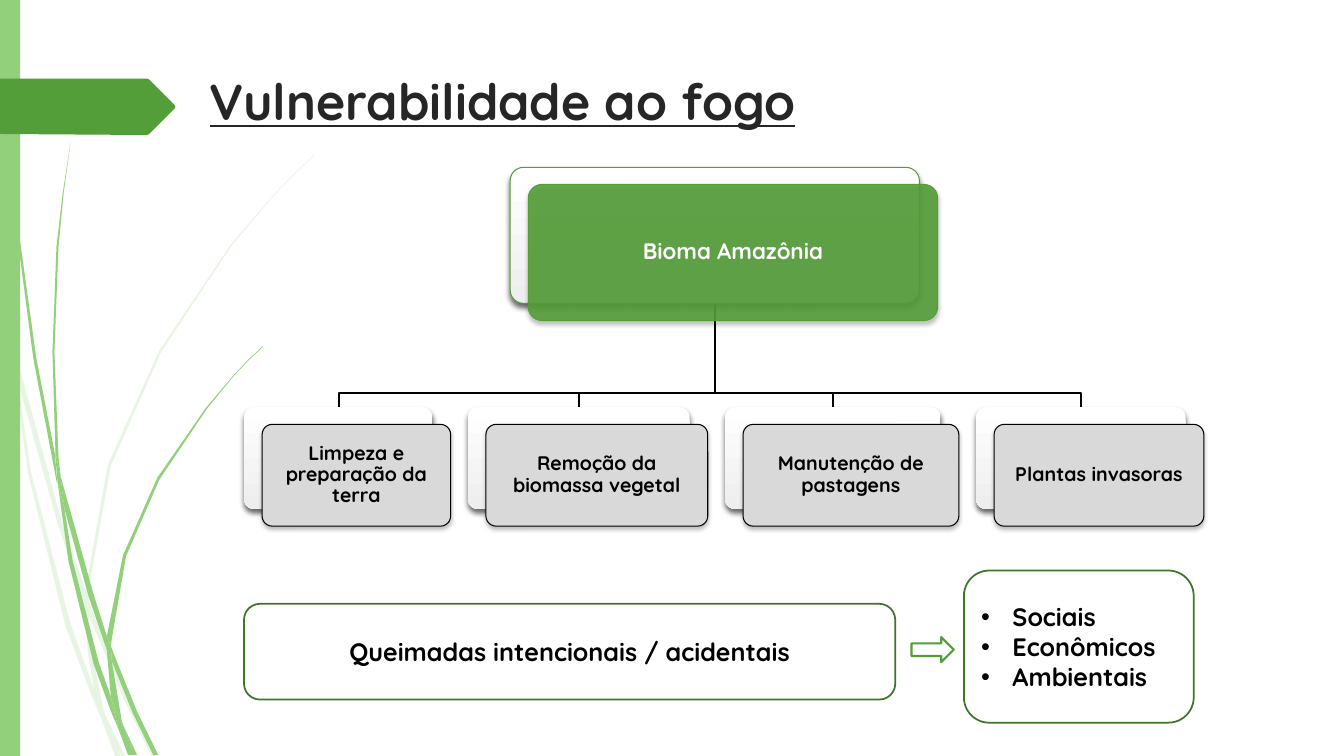
from collections import namedtuple

from lxml.etree import SubElement
from pptx import Presentation
from pptx.dml.color import RGBColor
from pptx.enum.shapes import MSO_SHAPE as Preset
from pptx.enum.text import MSO_ANCHOR as Anchor, PP_ALIGN as Align
from pptx.oxml.ns import qn
from pptx.util import Emu, Inches, Pt

# The slide is a grid of 1333 columns by 750 rows of square cells
CELL = Inches(0.01)
COLUMNS, ROWS = 1333, 750
FONT = "Quicksand"
Box = namedtuple("Box", "left top width height")
Shadow = namedtuple("Shadow", "opacity blur distance")

BLACK = RGBColor(0x00, 0x00, 0x00)
INK = RGBColor(0x26, 0x26, 0x26)
WHITE = RGBColor(0xFF, 0xFF, 0xFF)
PALE_GRAY = RGBColor(0xEE, 0xEE, 0xEE)
CARD_GRAY = RGBColor(0xD9, 0xD9, 0xD9)
LIGHT_GREEN = RGBColor(0x93, 0xD0, 0x7C)
GREEN = RGBColor(0x54, 0x9E, 0x39)
DARK_GREEN = RGBColor(0x3E, 0x75, 0x2A)

BACK_SHADOW = Shadow(60, 4, 3)
FRONT_SHADOW = Shadow(25, 3, 2)

# Outlines of the grass blades, in cells from the corner of their region
FAINT_BLADES = [
    [(11, 350), (9, 322), (0, 282), (0, 299), (10, 344)],
    [(58, 522), (84, 599), (85, 586), (62, 520), (14, 345), (17, 376)],
    [(92, 607), (88, 596), (88, 610), (123, 694), (150, 750), (155, 750), (127, 692)],
    [(119, 750), (124, 750), (105, 711)],
    [(93, 683), (70, 619), (31, 469), (17, 376), (11, 350), (28, 470), (65, 621),
     (92, 693), (101, 714), (99, 707)],
    [(84, 599), (87, 646), (93, 683), (96, 692), (105, 711), (103, 706), (91, 646),
     (88, 610), (88, 608)],
    [(88, 584), (110, 462), (160, 349), (229, 245), (268, 198), (290, 175), (312, 154),
     (312, 153), (289, 175), (268, 197), (228, 244), (158, 348), (107, 461), (85, 584),
     (85, 586), (88, 596)],
    [(101, 714), (114, 750), (119, 750)],
    [(88, 608), (88, 610), (88, 596), (85, 586), (84, 599)],
    [(96, 692), (93, 683), (99, 707), (101, 714), (119, 750), (105, 711)],
]
BRIGHT_BLADES = [
    [(7, 110), (17, 233), (33, 355), (56, 477), (57, 481), (55, 457), (55, 453),
     (36, 355), (19, 232), (8, 109), (5, 48), (4, 0), (3, 0), (4, 48)],
    [(88, 592), (106, 645), (106, 633), (106, 631), (93, 590), (60, 472), (64, 505)],
    [(113, 649), (110, 641), (111, 656), (132, 708), (152, 749), (157, 749), (136, 706)],
    [(110, 691), (98, 657), (72, 556), (64, 505), (57, 477), (68, 557), (93, 659),
     (111, 708), (117, 722), (116, 717)],
    [(60, 472), (58, 453), (54, 349), (58, 245), (63, 193), (70, 141), (62, 193),
     (56, 245), (52, 349), (55, 449)],
    [(133, 749), (136, 749), (122, 719)],
    [(57, 477), (64, 505), (60, 472), (55, 449), (55, 453)],
    [(111, 633), (125, 552), (158, 476), (205, 406), (231, 374), (245, 359), (261, 344),
     (260, 344), (245, 358), (231, 373), (204, 405), (156, 474), (122, 551), (106, 631),
     (110, 641)],
    [(117, 722), (127, 749), (131, 749)],
    [(106, 645), (110, 691), (116, 706), (122, 719), (121, 716), (111, 656), (109, 651)],
    [(106, 645), (109, 651), (111, 656), (110, 641), (106, 631), (106, 633)],
    [(116, 706), (110, 691), (116, 717), (117, 722), (130, 749), (133, 749), (122, 719)],
]


def style(shape, fill=None, line=None, width=0.75, opacity=100, shadow=None):
    """Set fill (one colour or a pair for a gradient), line and shadow."""
    if fill is None:
        shape.fill.background()
    elif isinstance(fill, list):
        shape.fill.gradient()
        shape.fill.gradient_angle = 270
        for stop, color in zip(shape.fill.gradient_stops, fill):
            stop.color.rgb = color
    else:
        shape.fill.solid()
        shape.fill.fore_color.rgb = fill
        if opacity < 100:
            color = shape._element.spPr.find(qn("a:solidFill")).find(qn("a:srgbClr"))
            SubElement(color, qn("a:alpha"), val=str(opacity * 1000))
    if line is None:
        shape.line.fill.background()
    else:
        shape.line.color.rgb = line
        shape.line.width = Pt(width)
    shape.shadow.inherit = False
    if shadow:
        effects = shape._element.spPr.find(qn("a:effectLst"))
        outer = SubElement(effects, qn("a:outerShdw"), blurRad=str(Pt(shadow.blur)),
                           dist=str(Pt(shadow.distance)), dir="5400000",
                           algn="ctr", rotWithShape="0")
        color = SubElement(outer, qn("a:srgbClr"), val=str(BLACK))
        SubElement(color, qn("a:alpha"), val=str(shadow.opacity * 1000))


def place(box):
    return [Emu(round(length * CELL)) for length in box]


def add_preset(slide, preset, box, corner=None, **look):
    shape = slide.shapes.add_shape(preset, *place(box))
    if corner is not None:
        shape.adjustments[0] = corner
    style(shape, **look)
    return shape


def add_outline(slide, box, points, close=True, **look):
    points = [(box.left + x, box.top + y) for x, y in points]
    builder = slide.shapes.build_freeform(*points[0], scale=CELL)
    builder.add_line_segments(points[1:], close=close)
    style(builder.convert_to_shape(), **look)


def write(shape, lines, size, color, align=Align.CENTER, anchor=Anchor.MIDDLE,
          spacing=None, bullet=None, underline=None):
    frame = shape.text_frame
    frame.word_wrap = True
    frame.vertical_anchor = anchor
    for index, line in enumerate(lines):
        paragraph = frame.paragraphs[0] if index == 0 else frame.add_paragraph()
        paragraph.alignment = align
        if spacing:
            paragraph.line_spacing = spacing
            paragraph.space_after = Pt(0.35 * size)
        if bullet:
            properties = paragraph._p.get_or_add_pPr()
            properties.set("marL", str(Inches(0.31)))
            properties.set("indent", str(-Inches(0.31)))
            SubElement(properties, qn("a:buFont"), typeface="Arial")
            SubElement(properties, qn("a:buChar"), char=bullet)
        run = paragraph.add_run()
        run.text = line
        run.font.name, run.font.size = FONT, Pt(size)
        run.font.bold, run.font.underline = True, underline
        run.font.color.rgb = color


def add_decoration(slide, box):
    for blades, opacity in ((FAINT_BLADES, 20), (BRIGHT_BLADES, 100)):
        for blade in blades:
            add_outline(slide, box, blade, fill=LIGHT_GREEN, opacity=opacity)
    add_preset(slide, Preset.RECTANGLE, Box(box.left, box.top, 20, box.height),
               fill=LIGHT_GREEN)
    # Title marker
    marker = [(0, 78), (146, 78), (148, 79), (173, 104), (174, 106), (173, 108),
              (148, 133), (146, 134), (0, 133)]
    add_outline(slide, box, marker, fill=GREEN)


def add_title(slide, box):
    title = slide.shapes.add_textbox(*place(box))
    write(title, ["Vulnerabilidade ao fogo"], 36, INK, Align.LEFT, Anchor.TOP,
          underline=True)


def add_card(slide, box, text, size, color, back_line=None, **front):
    """A label card in front of a pale card, shifted right and down."""
    add_preset(slide, Preset.ROUNDED_RECTANGLE, box, 0.1, fill=[WHITE, PALE_GRAY],
               line=back_line, shadow=BACK_SHADOW)
    shifted = box._replace(left=box.left + 18, top=box.top + 17)
    card = add_preset(slide, Preset.ROUNDED_RECTANGLE, shifted, 0.1,
                      shadow=FRONT_SHADOW, **front)
    write(card, [text], size, color, spacing=0.9)


def add_hierarchy(slide, box):
    children = [("Limpeza e preparação da terra", 187), ("Remoção da biomassa vegetal", 220),
                ("Manutenção de pastagens", 214), ("Plantas invasoras", 208)]
    gap, child_height = 35, 101
    root = Box(box.left + (box.width - 406) / 2, box.top, 406, 135)
    trunk, root_bottom = root.left + root.width / 2, root.top + root.height
    child_top = box.top + box.height - child_height
    cards, left = [], box.left
    for text, width in children:
        cards.append((text, Box(left, child_top, width, child_height)))
        left += width + gap

    # Branches lie behind the cards
    for _, card in reversed(cards):
        middle, bus = card.left + card.width / 2, child_top - 14
        branch = [(trunk, root_bottom), (trunk, bus), (middle, bus), (middle, child_top)]
        add_outline(slide, Box(0, 0, COLUMNS, ROWS), branch, close=False,
                    line=BLACK, width=1.25)
    add_card(slide, root, "Bioma Amazônia", 16, WHITE, back_line=GREEN,
             fill=GREEN, line=GREEN, opacity=90)
    for text, card in cards:
        add_card(slide, card, text, 14, BLACK, fill=CARD_GRAY, line=BLACK)


def add_impacts(slide, box):
    frame = dict(fill=WHITE, line=DARK_GREEN, width=1.25)
    cause = add_preset(slide, Preset.ROUNDED_RECTANGLE,
                       Box(box.left, box.top + 33, 646, 95), **frame)
    write(cause, ["Queimadas intencionais / acidentais"], 18, BLACK)
    effects = add_preset(slide, Preset.ROUNDED_RECTANGLE,
                         Box(box.left + box.width - 228, box.top, 228, box.height), **frame)
    write(effects, ["Sociais", "Econômicos", "Ambientais"], 18, BLACK, Align.LEFT, bullet="•")
    add_preset(slide, Preset.RIGHT_ARROW, Box(box.left + 662, box.top + 66, 42, 25),
               fill=WHITE, line=GREEN, width=1.5)


def main():
    presentation = Presentation()
    presentation.slide_width, presentation.slide_height = COLUMNS * CELL, ROWS * CELL
    slide = presentation.slides.add_slide(presentation.slide_layouts[6])
    add_decoration(slide, Box(0, 0, 312, ROWS))
    add_title(slide, Box(198, 65, 975, 85))
    add_hierarchy(slide, Box(242, 166, 934, 339))
    add_impacts(slide, Box(242, 566, 942, 151))
    presentation.save("out.pptx")


if __name__ == "__main__":
    main()
